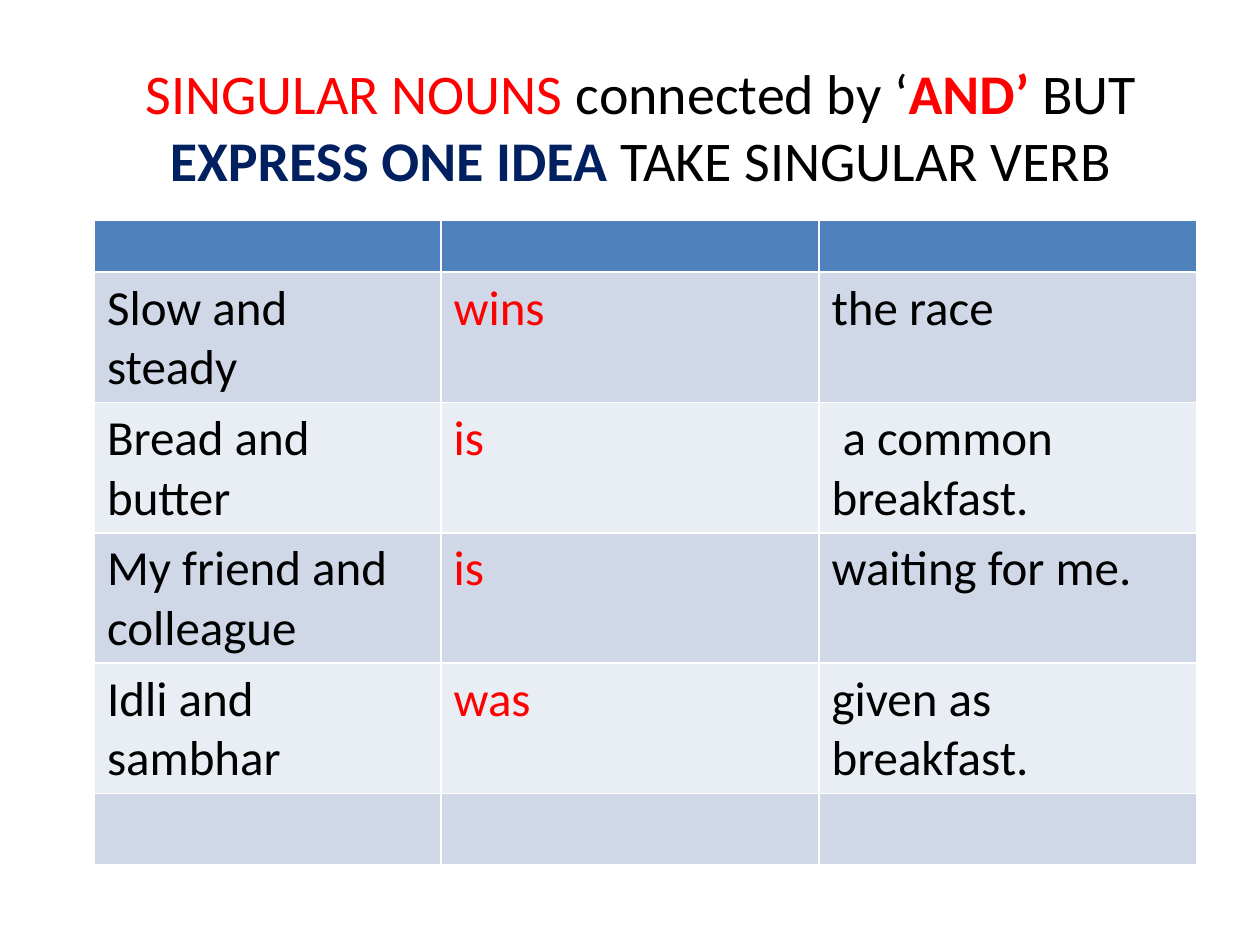
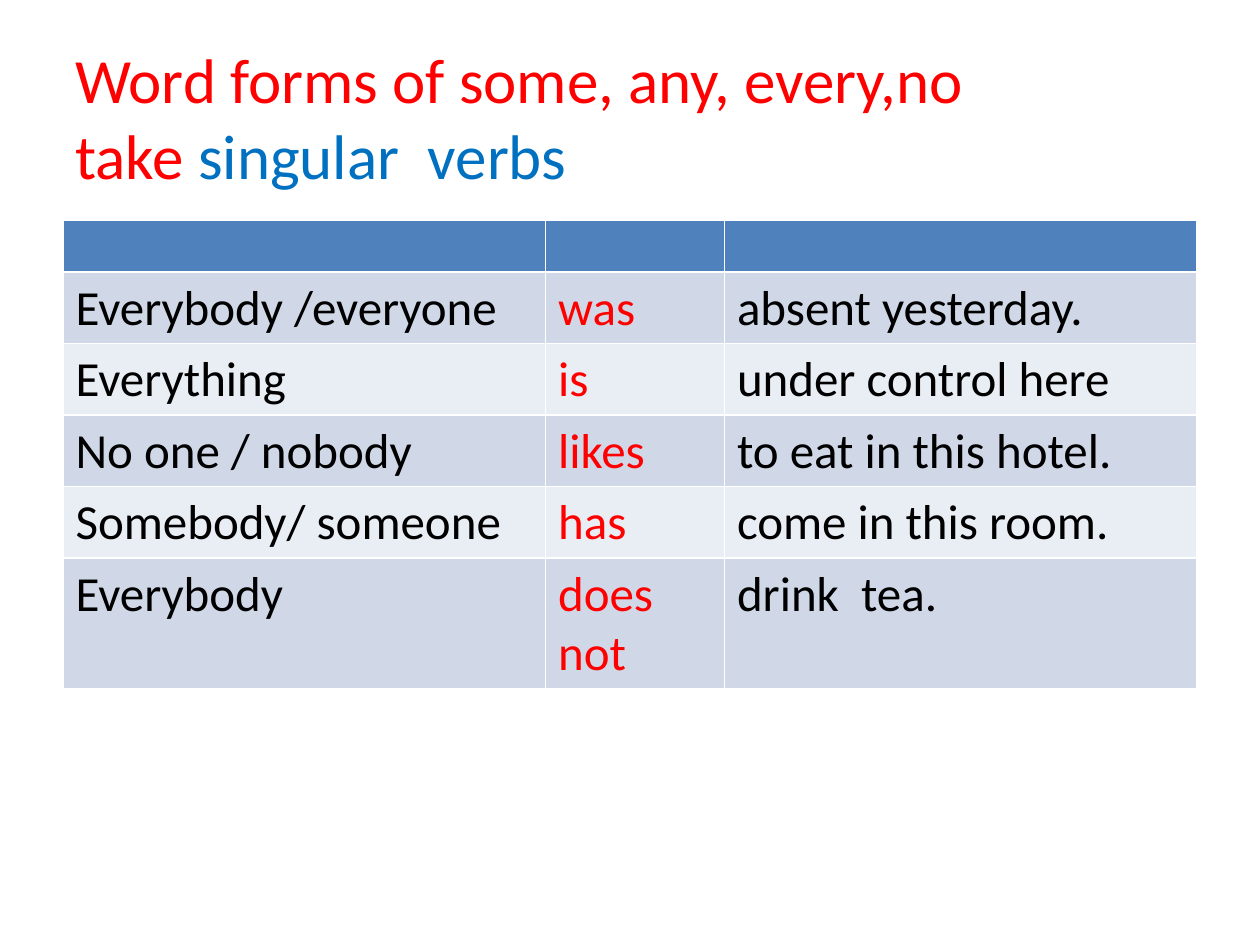
import pptx
import pptx.dml.color
import pptx.enum.text
import pptx.util

PX = 9144  # EMU in one px, 100 px to the inch
FONT = "Calibri"
BLACK, RED, NAVY, BLUE = "000000", "FF0000", "002060", "0070C0"
HEADER, BANDS = "4F81BD", ("E9EDF4", "D0D8E8")
CELL_SIZE = 28
TABLE_TOP, ROW_HEIGHT = 175, 41
CENTER = pptx.enum.text.PP_ALIGN.CENTER
LEFT = pptx.enum.text.PP_ALIGN.LEFT

SLIDES = [
    {
        "title_box": (50, 25, 917, 150), "title_size": 32, "align": CENTER,
        "title": [[("SINGULAR NOUNS ", RED, False), ("connected by ‘", BLACK, False),
                   ("AND’ ", RED, True), ("BUT ", BLACK, False),
                   ("EXPRESS ONE IDEA ", NAVY, True),
                   ("TAKE SINGULAR VERB", BLACK, False)]],
        "table_left": 75, "columns": (275, 300, 300),
        "rows": [("Slow and steady", "wins", "the race"),
                 ("Bread and butter", "is", " a common breakfast."),
                 ("My friend and colleague", "is", "waiting for me."),
                 ("Idli and sambhar", "was", "given as breakfast."),
                 ("", "", "")],
    },
    {
        "title_box": (50, 30, 900, 125), "title_size": 36, "align": LEFT,
        "title": [[("Word forms of some, any, every,no", RED, False)],
                  [("take ", RED, False), ("singular  verbs", BLUE, False)]],
        "table_left": 50, "columns": (383, 142, 375),
        "rows": [("Everybody /everyone", "was", "absent yesterday."),
                 ("Everything", "is", "under control here"),
                 ("No one / nobody", "likes", "to eat in this hotel."),
                 ("Somebody/ someone", "has", "come in this room."),
                 ("Everybody", "does not", "drink  tea.")],
    },
]


def rgb(color):
    return pptx.dml.color.RGBColor.from_string(color)


def add_run(p, text, size, color, bold=False):
    r = p.add_run()
    r.text = text
    r.font.name = FONT
    r.font.size = pptx.util.Pt(size)
    r.font.bold = bold
    r.font.color.rgb = rgb(color)


prs = pptx.Presentation()
prs.slide_width, prs.slide_height = 1000 * PX, 750 * PX

for content in SLIDES:
    s = prs.slides.add_slide(prs.slide_layouts[6])

    # Title
    tf = s.shapes.add_textbox(*(n * PX for n in content["title_box"])).text_frame
    tf.word_wrap = True
    tf.vertical_anchor = pptx.enum.text.MSO_ANCHOR.MIDDLE
    p = tf.paragraphs[0]
    p.alignment = content["align"]
    for number, line in enumerate(content["title"]):
        if number:
            p.add_line_break()
        for text, color, bold in line:
            add_run(p, text, content["title_size"], color, bold)

    # Table: an empty header row, then subject, verb and rest of each sentence
    columns, rows = content["columns"], content["rows"]
    row_count = len(rows) + 1
    table = s.shapes.add_table(
        row_count, len(columns), content["table_left"] * PX, TABLE_TOP * PX,
        sum(columns) * PX, row_count * ROW_HEIGHT * PX).table
    for column, width in zip(table.columns, columns):
        column.width = width * PX
    for cell in table.rows[0].cells:
        cell.fill.solid()
        cell.fill.fore_color.rgb = rgb(HEADER)
    for i, texts in enumerate(rows, 1):
        for j, text in enumerate(texts):
            cell = table.cell(i, j)
            cell.fill.solid()
            cell.fill.fore_color.rgb = rgb(BANDS[i % 2])
            p = cell.text_frame.paragraphs[0]
            if text:
                add_run(p, text, CELL_SIZE, RED if j == 1 else BLACK)
            else:  # an empty cell keeps the height of one line
                p._p.get_or_add_endParaRPr().set("sz", str(CELL_SIZE * 100))

prs.save("out.pptx")
